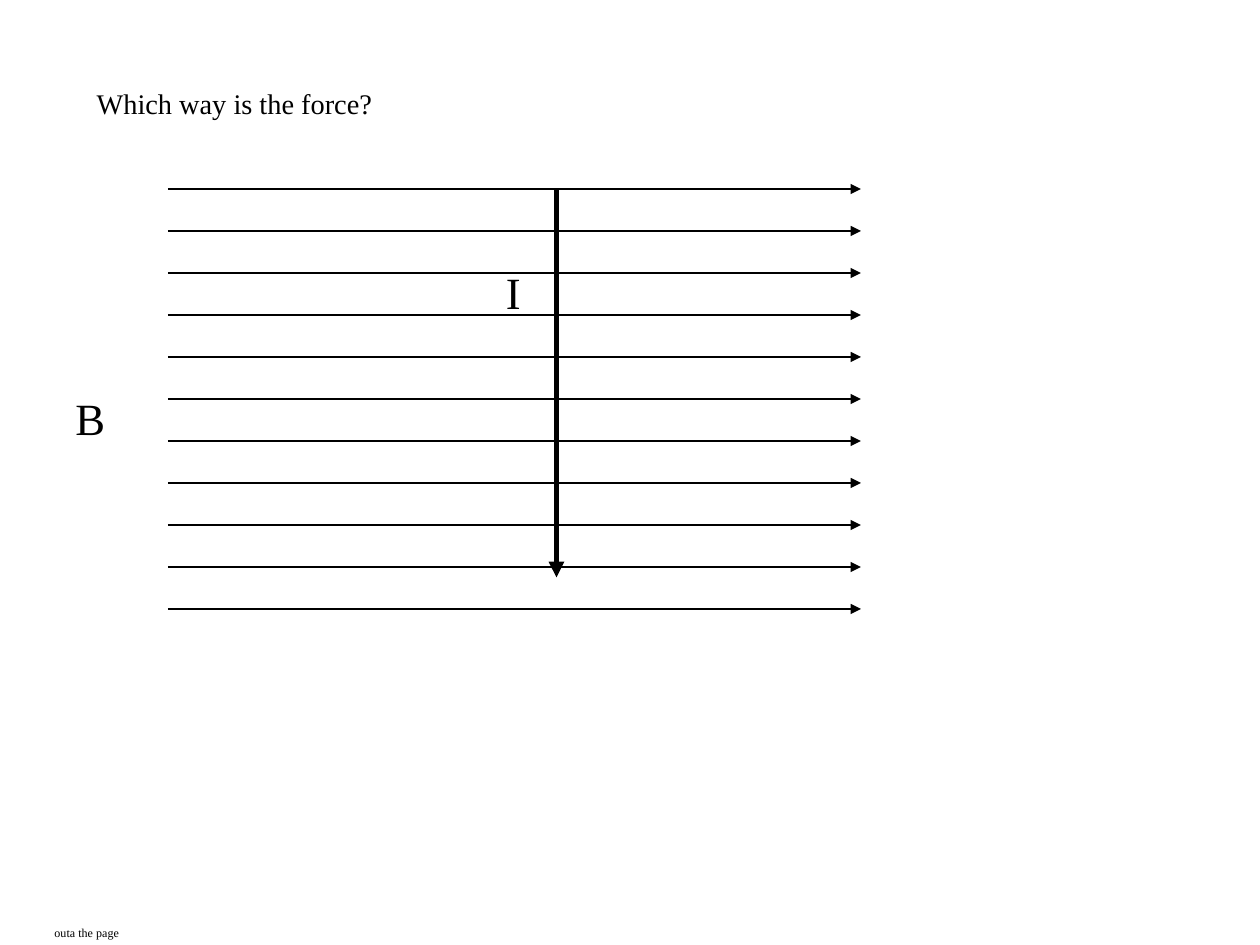
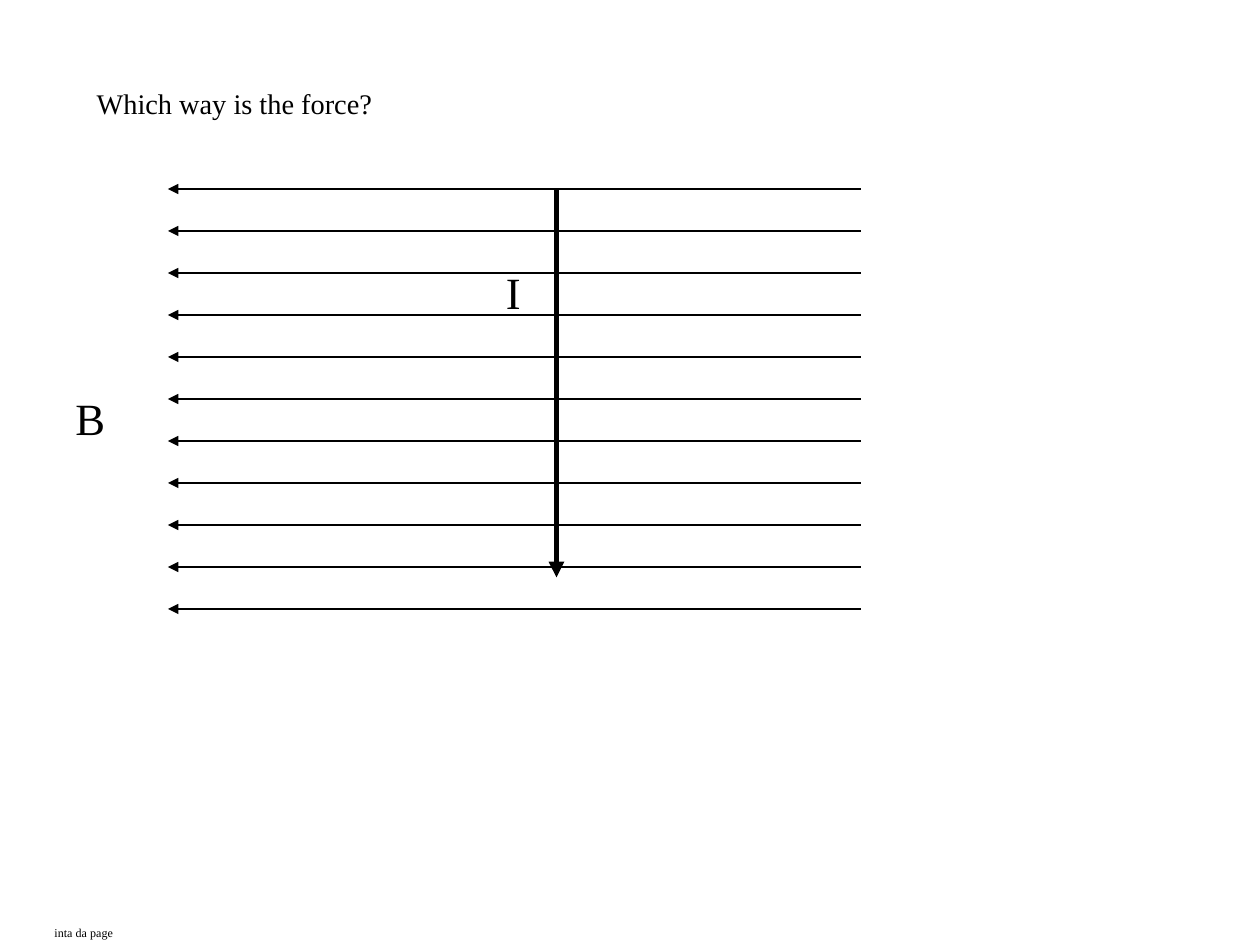
from dataclasses import dataclass

from lxml import etree
from pptx import Presentation
from pptx import util as u
from pptx.dml.color import RGBColor
from pptx.enum import shapes, text
from pptx.oxml.ns import qn


@dataclass(frozen=True)
class Theme:
    font: str = "Times New Roman"
    ink: RGBColor = RGBColor(0, 0, 0)
    paper: RGBColor = RGBColor(255, 255, 255)
    title_size: int = 28
    symbol_size: int = 44
    answer_size: int = 12
    text_baseline: int = -35000
    field_width: float = 0.75
    current_width: float = 3


class SlideBuilder:
    def __init__(self, presentation, theme):
        self.presentation = presentation
        self.theme = theme
        self.slide = None

    def new_slide(self, title):
        layout = self.presentation.slide_layouts.get_by_name("Title Only")
        self.slide = self.presentation.slides.add_slide(layout)
        fill = self.slide.background.fill
        fill.solid()
        fill.fore_color.rgb = self.theme.paper
        shape = self.slide.shapes.title
        shape.left, shape.top = u.Pt(48), u.Pt(24)
        shape.width, shape.height = u.Pt(286.5), u.Pt(41)
        self.set_words(shape, title, self.theme.title_size)

    def set_words(self, shape, words, size):
        frame = shape.text_frame
        frame.text = words
        frame.word_wrap = False
        frame.auto_size = text.MSO_AUTO_SIZE.SHAPE_TO_FIT_TEXT
        frame.vertical_anchor = text.MSO_ANCHOR.TOP
        paragraph = frame.paragraphs[0]
        paragraph.alignment = text.PP_ALIGN.LEFT
        font = paragraph.runs[0].font
        font.name = self.theme.font
        font.size = u.Pt(size)
        font.color.rgb = self.theme.ink
        for properties in shape.element.iter(qn("a:rPr")):
            properties.set("baseline", str(self.theme.text_baseline))

    def label(self, words, left, top, width, height, size):
        box = self.slide.shapes.add_textbox(
            u.Pt(left), u.Pt(top), u.Pt(width), u.Pt(height))
        self.set_words(box, words, size)

    def arrow(self, container, start, end, width):
        connector = container.add_connector(
            shapes.MSO_CONNECTOR.STRAIGHT, *map(u.Pt, (*start, *end)))
        connector.line.color.rgb = self.theme.ink
        connector.line.width = u.Pt(width)
        properties = connector.element.spPr
        outline = properties.find(qn("a:ln"))
        etree.SubElement(outline, qn("a:tailEnd"), type="triangle")
        etree.SubElement(properties, qn("a:effectLst"))

    def field(self, start_x, end_x, top=108, gap=24, count=11):
        group = self.slide.shapes.add_group_shape()
        for row in range(count):
            y = top + row * gap
            self.arrow(group.shapes, (start_x, y), (end_x, y), self.theme.field_width)


def add_force_question(builder, answer, answer_width, field_start, field_end):
    theme = builder.theme
    builder.new_slide("Which way is the force?")
    builder.label(answer, 24, 516, answer_width, 21.6, theme.answer_size)
    builder.arrow(builder.slide.shapes, (318, 108), (318, 330), theme.current_width)
    builder.label("I", 282, 114, 28.8, 60, theme.symbol_size)
    builder.field(field_start, field_end)
    builder.label("B", 36, 186, 44, 60, theme.symbol_size)


def main():
    presentation = Presentation()
    presentation.slide_width, presentation.slide_height = u.Pt(720), u.Pt(540)
    builder = SlideBuilder(presentation, Theme())
    add_force_question(builder, "outa the page", 78.5, 96, 492)
    add_force_question(builder, "inta da page", 72.7, 492, 96)
    presentation.save("out.pptx")


if __name__ == "__main__":
    main()
